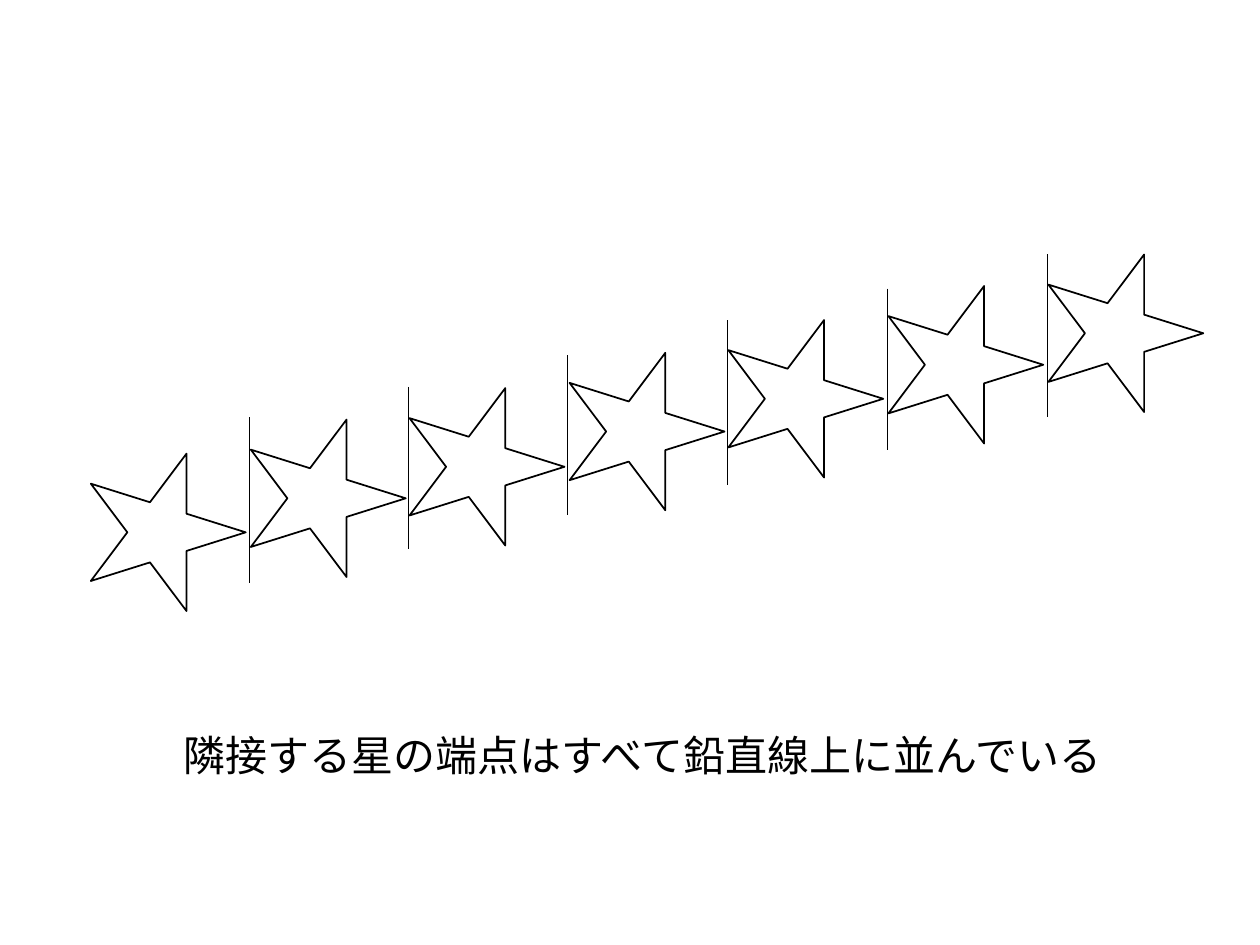
from typing import NamedTuple

from lxml.etree import SubElement
from pptx import Presentation
from pptx.dml.color import RGBColor
from pptx.enum.shapes import MSO_CONNECTOR, MSO_SHAPE
from pptx.enum.text import MSO_AUTO_SIZE
from pptx.oxml.ns import qn
from pptx.shapes.group import GroupShape
from pptx.slide import Slide
from pptx.util import Emu, Pt

EMU_PER_PX = 9144  # 100 px to the inch
BLACK = RGBColor(0x00, 0x00, 0x00)
FONT = "Noto Sans CJK JP"
STAR_WIDTH, STAR_HEIGHT = 125, 123


class Star(NamedTuple):
    left: int
    top: int


class Vertical(NamedTuple):
    x: int
    top: int
    bottom: int


# Rising row of stars, left to right
STARS = [
    Star(71, 361), Star(198, 334), Star(324, 309), Star(451, 281),
    Star(577, 255), Star(704, 228), Star(831, 203),
]
# One vertical line between each pair of neighbours
VERTICALS = [
    Vertical(198, 331, 463), Vertical(324, 307, 436), Vertical(450, 282, 409),
    Vertical(577, 254, 385), Vertical(704, 229, 357), Vertical(831, 202, 331),
]


def px(length: int) -> Emu:
    return Emu(length * EMU_PER_PX)


def draw_star(slide: Slide, star: Star) -> None:
    shape = slide.shapes.add_shape(
        MSO_SHAPE.STAR_5_POINT,
        px(star.left), px(star.top), px(STAR_WIDTH), px(STAR_HEIGHT),
    )
    shape.rotation = 90
    shape.shadow.inherit = False
    shape.fill.background()
    shape.line.color.rgb = BLACK
    shape.line.width = Pt(1)


def draw_vertical(group: GroupShape, vertical: Vertical) -> None:
    connector = group.shapes.add_connector(
        MSO_CONNECTOR.STRAIGHT,
        px(vertical.x), px(vertical.top), px(vertical.x), px(vertical.bottom),
    )
    connector.line.color.rgb = BLACK
    connector.line.width = Pt(0.25)
    SubElement(connector.element.spPr, qn("a:effectLst"))


def draw_caption(slide: Slide, text: str) -> None:
    box = slide.shapes.add_textbox(px(136), px(574), px(756), px(50))
    frame = box.text_frame
    frame.word_wrap = False
    frame.auto_size = MSO_AUTO_SIZE.SHAPE_TO_FIT_TEXT
    run = frame.paragraphs[0].add_run()
    run.text = text
    run.font.size = Pt(24)
    run.font.name = FONT
    run.font.color.rgb = BLACK
    # Japanese glyphs take the East Asian typeface
    SubElement(run.font._element, qn("a:ea"), typeface=FONT)


def main() -> None:
    presentation = Presentation()
    presentation.slide_width, presentation.slide_height = px(1000), px(750)
    slide = presentation.slides.add_slide(presentation.slide_layouts[6])

    for star in STARS:
        draw_star(slide, star)

    group = slide.shapes.add_group_shape()
    for vertical in VERTICALS:
        draw_vertical(group, vertical)

    draw_caption(slide, "隣接する星の端点はすべて鉛直線上に並んでいる")
    presentation.save("out.pptx")


if __name__ == "__main__":
    main()
